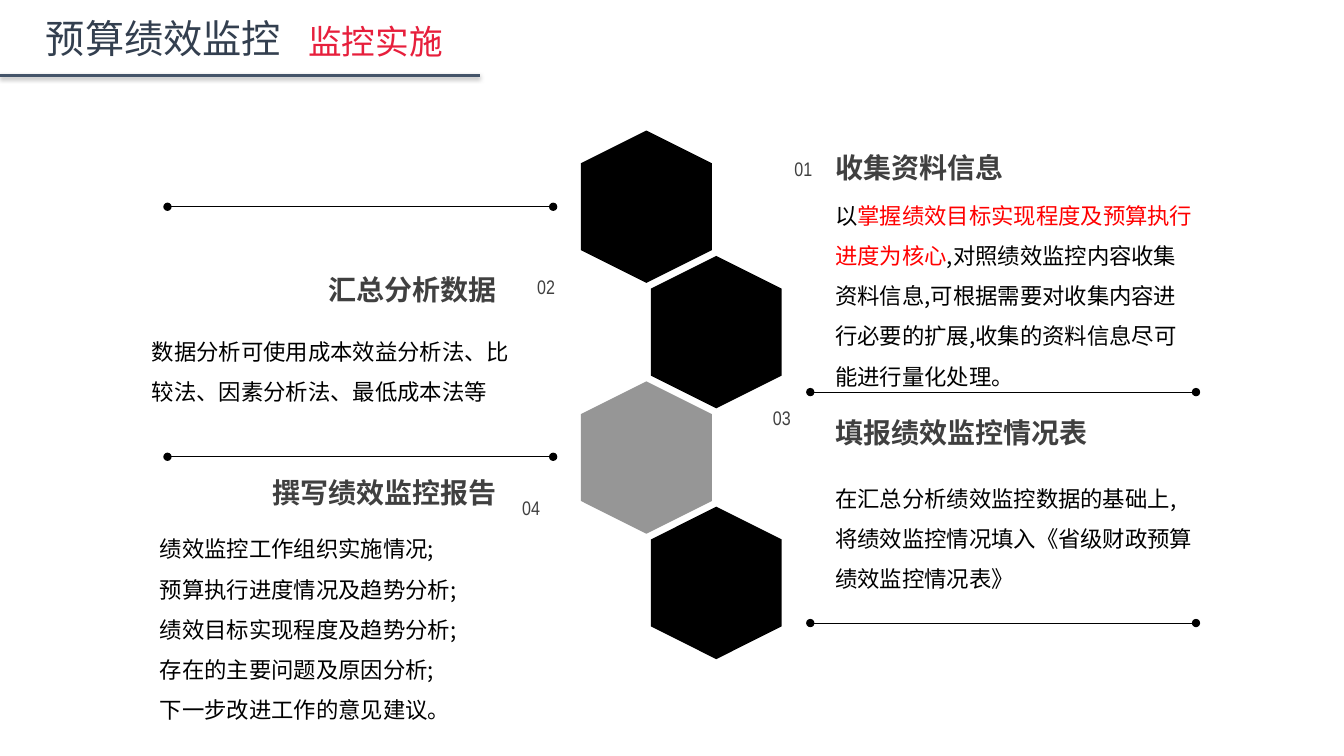
from lxml.etree import SubElement
from pptx import Presentation
from pptx.dml.color import RGBColor
from pptx.enum.shapes import MSO_CONNECTOR, MSO_SHAPE
from pptx.enum.text import PP_ALIGN
from pptx.oxml.ns import qn
from pptx.util import Cm, Pt

BLACK, GREY, DARK, RED = "000000", "969696", "404040", "FF0000"
NAVY, SLATE, CRIMSON = "333F4F", "445469", "E71F3C"


def rgb(value):
    return RGBColor.from_string(value)


class SlideBuilder:
    cjk = "Noto Sans CJK SC"
    digits = "Arial Narrow"

    def __init__(self, s):
        self.s = s

    def text(self, x, y, w, h, paragraphs, size, color=BLACK, name=cjk,
             bold=False, align=PP_ALIGN.LEFT, spacing=None, inset=True):
        """Each paragraph is a list of (text, colour or None) runs."""
        tf = self.s.shapes.add_textbox(Cm(x), Cm(y), Cm(w), Cm(h)).text_frame
        tf.word_wrap = True
        if not inset:
            tf.margin_left = tf.margin_right = tf.margin_top = tf.margin_bottom = 0
        for i, runs in enumerate(paragraphs):
            p = tf.add_paragraph() if i else tf.paragraphs[0]
            p.alignment = align
            if spacing:
                p.line_spacing = spacing
            p.font.size, p.font.bold, p.font.name = Pt(size), bold, name
            p.font.color.rgb = rgb(color)
            # East Asian typeface
            SubElement(p.font._element, qn("a:ea"), typeface=name)
            for words, run_color in runs:
                r = p.add_run()
                r.text = words
                if run_color:
                    r.font.color.rgb = rgb(run_color)

    def hexagon(self, cx, cy, color, length=3.84, width=3.3):
        sp = self.s.shapes.add_shape(
            MSO_SHAPE.HEXAGON, Cm(cx - length / 2), Cm(cy - width / 2),
            Cm(length), Cm(width))
        sp.rotation = 90
        sp.shadow.inherit = False
        sp.fill.solid()
        sp.fill.fore_color.rgb = rgb(color)
        sp.line.fill.background()

    def line(self, x1, x2, y, color=BLACK, width=0.75, dots=True, shadow=False):
        c = self.s.shapes.add_connector(
            MSO_CONNECTOR.STRAIGHT, Cm(x1), Cm(y), Cm(x2), Cm(y))
        c.line.color.rgb = rgb(color)
        c.line.width = Pt(width)
        if dots:
            for end in ("a:headEnd", "a:tailEnd"):
                SubElement(c.line._get_or_add_ln(), qn(end), type="oval")
        effects = SubElement(c._element.spPr, qn("a:effectLst"))
        if shadow:
            outer = SubElement(effects, qn("a:outerShdw"), blurRad=str(Pt(3.1)),
                               dist=str(Pt(1.6)), dir="5400000", rotWithShape="0")
            tint = SubElement(outer, qn("a:srgbClr"), val=BLACK)
            SubElement(tint, qn("a:alpha"), val="38000")

    def step(self, number, number_at, title, title_at, body, body_at, rule_y, right):
        """One numbered step: number, heading, body text and dotted rule."""
        self.text(*number_at, 2.69, 1.19, [[(number, None)]], 14, DARK,
                  self.digits, align=PP_ALIGN.CENTER)
        self.text(*title_at, 7.5 if right else 6.83, 1.12, [[(title, None)]], 20, DARK,
                  bold=True, align=PP_ALIGN.LEFT if right else PP_ALIGN.RIGHT)
        self.text(*body_at, body, 16, spacing=1.5)
        x = 20.42 if right else 4.22
        self.line(x, x + 9.72, rule_y)


def main():
    prs = Presentation()
    prs.slide_width, prs.slide_height = Cm(33.87), Cm(19.05)
    b = SlideBuilder(prs.slides.add_slide(prs.slide_layouts[6]))

    # Header
    b.text(1.16, 0.36, 6.4, 1.4, [[("预算绩效监控", None)]], 28, NAVY, inset=False)
    b.text(7.77, 0.52, 4, 1.2, [[("监控实施", None)]], 24, CRIMSON, inset=False)
    b.line(0, 12.09, 1.9, SLATE, 2, dots=False, shadow=True)

    # Zigzag of hexagons
    for i, color in enumerate([BLACK, BLACK, GREY, BLACK]):
        b.hexagon(18.05 if i % 2 else 16.29, 5.21 + 3.16 * i, color)

    # Steps
    collect = [[
        ("以", None),
        ("掌握绩效目标实现程度及预算执行进度为核心", RED),
        (",对照绩效监控内容收集资料信息,可根据需要对收集内容进行必要的扩展,"
         "收集的资料信息尽可能进行量化处理。", None)]]
    analyse = [[("数据分析可使用成本效益分析法、比较法、因素分析法、最低成本法等", None)]]
    fill_in = [[("在汇总分析绩效监控数据的基础上,将绩效监控情况填入"
                 "《省级财政预算绩效监控情况表》", None)]]
    report = [[(item, None)] for item in (
        "绩效监控工作组织实施情况;",
        "预算执行进度情况及趋势分析;",
        "绩效目标实现程度及趋势分析;",
        "存在的主要问题及原因分析;",
        "下一步改进工作的意见建议。")]
    b.step("01", (18.9, 3.84), "收集资料信息", (20.8, 3.66),
           collect, (20.8, 4.62, 9.63, 5.38), 9.88, True)
    b.step("02", (12.42, 6.81), "汇总分析数据", (5.94, 6.73),
           analyse, (3.58, 8.05, 9.63, 2.18), 5.21, False)
    b.step("03", (18.36, 10.11), "填报绩效监控情况表", (20.8, 10.34),
           fill_in, (20.8, 11.76, 9.63, 3.23), 15.7, True)
    b.step("04", (12.04, 12.37), "撰写绩效监控报告", (5.94, 11.86),
           report, (3.78, 13.03, 9.63, 5.38), 11.51, False)

    prs.save("out.pptx")


if __name__ == "__main__":
    main()
